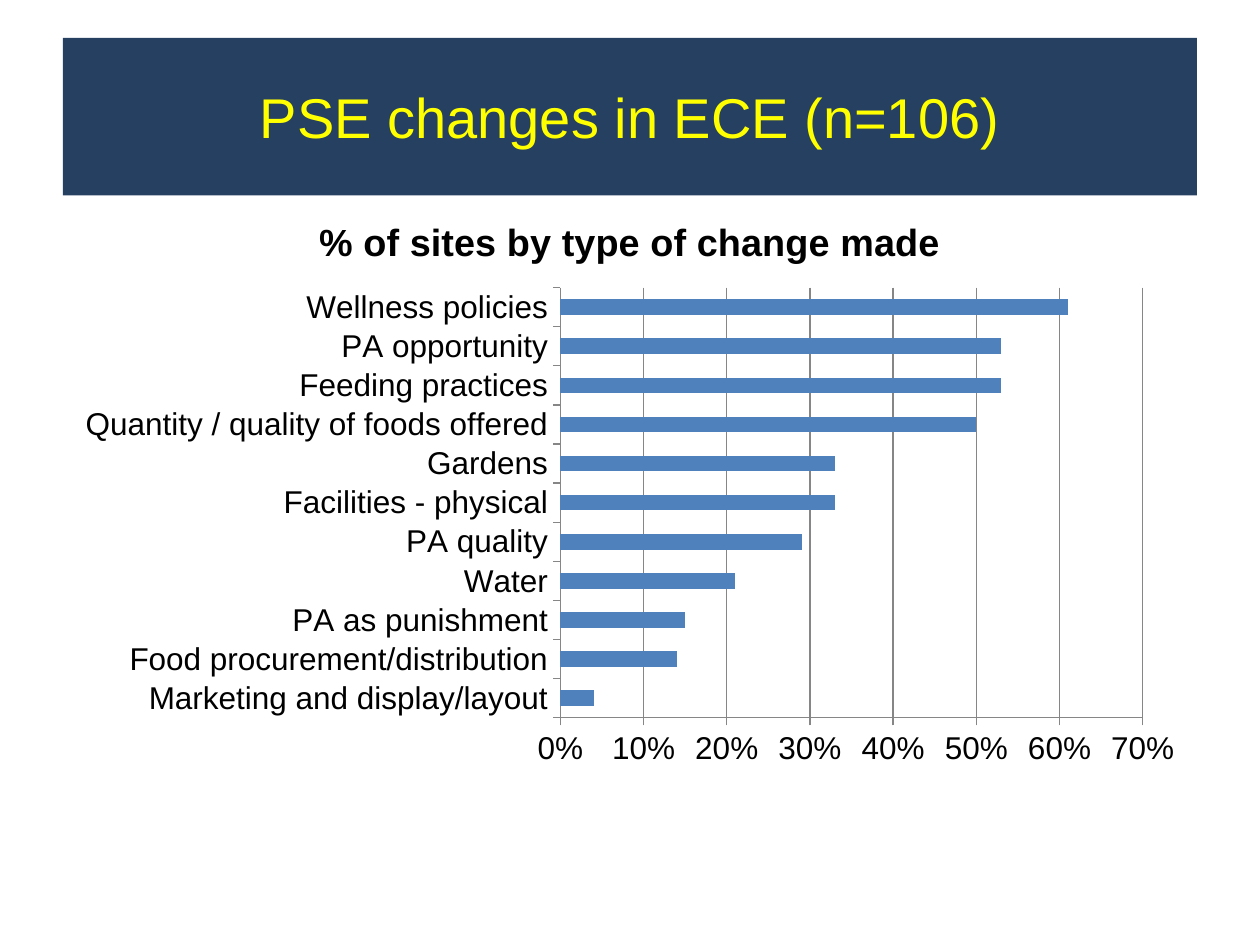
import pptx
import pptx.chart.data
import pptx.dml.color
import pptx.enum.chart
import pptx.enum.shapes
import pptx.enum.text
import pptx.util

Pt = pptx.util.Pt

FONT = "Arial"
COLORS = {
    "banner": "254061",
    "heading": "FFFF00",
    "text": "000000",
    "bar": "4F81BD",
    "grid": "868686",
}
HEADING = "PSE changes in ECE (n=106)"
CHART_TITLE = "% of sites by type of change made"
SITES_BY_CHANGE = [
    ("Marketing and display/layout", 0.04),
    ("Food procurement/distribution", 0.14),
    ("PA as punishment", 0.15),
    ("Water", 0.21),
    ("PA quality", 0.29),
    ("Facilities - physical", 0.33),
    ("Gardens", 0.33),
    ("Quantity / quality of foods offered", 0.5),
    ("Feeding practices", 0.53),
    ("PA opportunity", 0.53),
    ("Wellness policies", 0.61),
]
SLIDE_WIDTH, SLIDE_HEIGHT = 720, 540
MARGIN = 36
CONTENT_WIDTH = SLIDE_WIDTH - 2 * MARGIN
BANNER_TOP, BANNER_HEIGHT = 21.6, 90
CHART_TOP, CHART_HEIGHT = 110.16, 334.08


def color(name):
    return pptx.dml.color.RGBColor.from_string(COLORS[name])


def write_text(frame, text, size, color_name, bold=False):
    paragraph = frame.paragraphs[0]
    paragraph.alignment = pptx.enum.text.PP_ALIGN.CENTER
    run = paragraph.add_run()
    run.text = text
    run.font.name = FONT
    run.font.size = Pt(size)
    run.font.bold = bold
    run.font.color.rgb = color(color_name)


def add_banner(slide):
    banner = slide.shapes.add_shape(
        pptx.enum.shapes.MSO_SHAPE.RECTANGLE,
        Pt(MARGIN), Pt(BANNER_TOP), Pt(CONTENT_WIDTH), Pt(BANNER_HEIGHT))
    banner.shadow.inherit = False
    banner.fill.solid()
    banner.fill.fore_color.rgb = color("banner")
    banner.line.fill.background()
    frame = banner.text_frame
    frame.word_wrap = True
    frame.vertical_anchor = pptx.enum.text.MSO_ANCHOR.MIDDLE
    write_text(frame, HEADING, size=32, color_name="heading")


def add_sites_chart(slide):
    data = pptx.chart.data.CategoryChartData(number_format="0%")
    data.categories = [change for change, share in SITES_BY_CHANGE]
    data.add_series(CHART_TITLE, [share for change, share in SITES_BY_CHANGE])
    chart = slide.shapes.add_chart(
        pptx.enum.chart.XL_CHART_TYPE.BAR_CLUSTERED,
        Pt(MARGIN), Pt(CHART_TOP), Pt(CONTENT_WIDTH), Pt(CHART_HEIGHT), data).chart
    chart.font.name = FONT
    chart.font.size = Pt(18)
    chart.font.color.rgb = color("text")
    chart.has_legend = False
    chart.has_title = True
    write_text(chart.chart_title.text_frame, CHART_TITLE,
               size=21.6, color_name="text", bold=True)

    plot = chart.plots[0]
    plot.gap_width = 150
    plot.vary_by_categories = False
    bars = plot.series[0].format.fill
    bars.solid()
    bars.fore_color.rgb = color("bar")

    shares = chart.value_axis
    shares.minimum_scale, shares.maximum_scale, shares.major_unit = 0, 0.7, 0.1
    shares.tick_labels.number_format = "0%"
    shares.tick_labels.number_format_is_linked = False
    shares.has_major_gridlines = True
    for axis in (chart.category_axis, shares):
        axis.major_tick_mark = pptx.enum.chart.XL_TICK_MARK.OUTSIDE
    for part in (chart.category_axis, shares, shares.major_gridlines):
        part.format.line.color.rgb = color("grid")
        part.format.line.width = Pt(0.75)


def main():
    presentation = pptx.Presentation()
    presentation.slide_width = Pt(SLIDE_WIDTH)
    presentation.slide_height = Pt(SLIDE_HEIGHT)
    slide = presentation.slides.add_slide(presentation.slide_layouts[6])
    add_banner(slide)
    add_sites_chart(slide)
    presentation.save("out.pptx")


if __name__ == "__main__":
    main()
